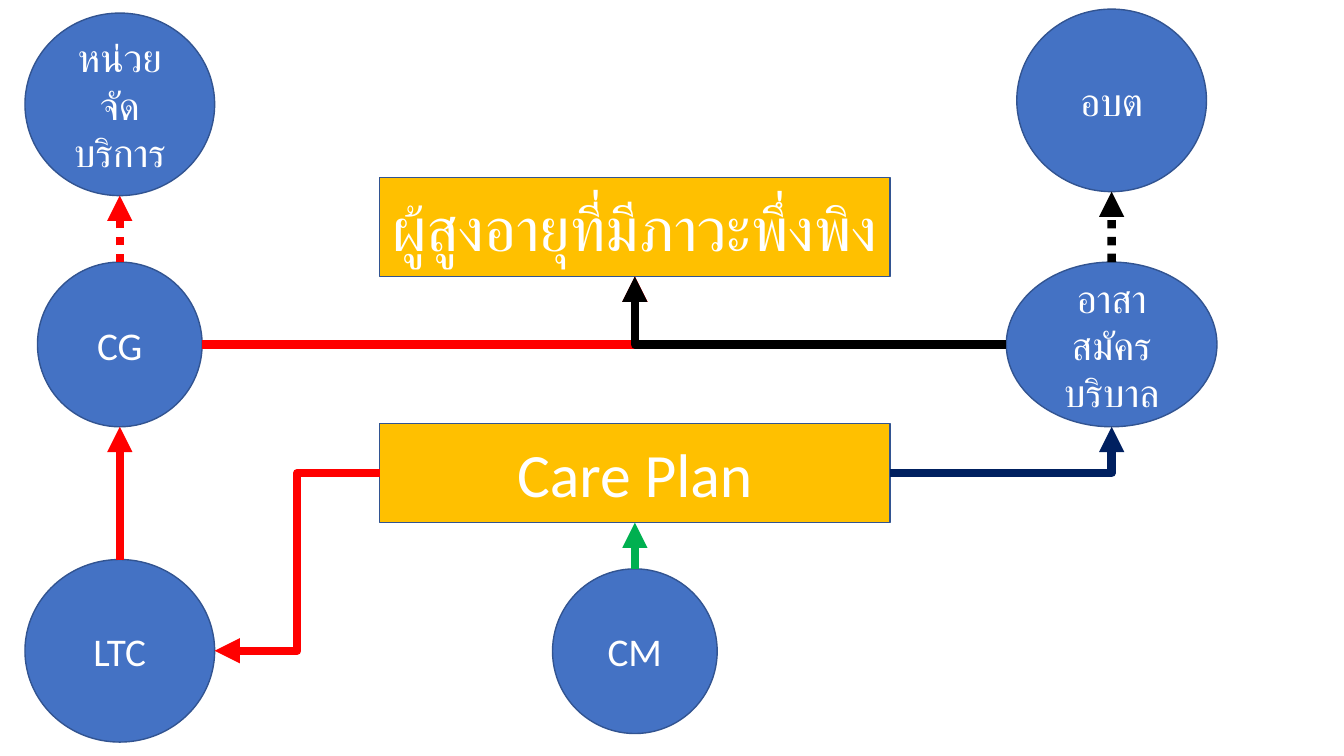
from dataclasses import dataclass
from lxml import etree
from pptx import Presentation
from pptx.dml.color import RGBColor
from pptx.enum.dml import MSO_LINE
from pptx.enum.shapes import MSO_CONNECTOR, MSO_SHAPE
from pptx.enum.text import MSO_ANCHOR, PP_ALIGN
from pptx.oxml.ns import qn
from pptx.util import Cm, Pt

OVAL, RECT = MSO_SHAPE.OVAL, MSO_SHAPE.RECTANGLE
LINE, BENT = MSO_CONNECTOR.STRAIGHT, MSO_CONNECTOR.ELBOW
DOTS = MSO_LINE.ROUND_DOT
MID, CENTER = MSO_ANCHOR.MIDDLE, PP_ALIGN.CENTER


@dataclass(frozen=True)
class Theme:
    font: str = "Calibri"
    small: int = 28
    large: int = 44
    edge: float = 1
    link: float = 6
    white: str = "FFFFFF"
    blue: str = "4472C4"
    rim: str = "325491"
    gold: str = "FFC000"
    red: str = "FF0000"
    green: str = "00B050"
    navy: str = "002060"
    black: str = "000000"


THEME = Theme()
BIG, ROUND, WIDE, BAR = (4.78, 4.6), (4.15, 4.15), (5.31, 4.15), (12.86, 2.5)
SIDES = {"top": (0.5, 0), "left": (0, 0.5), "low": (0.5, 1), "right": (1, 0.5)}


def tint(text):
    return RGBColor.from_string(text)


def node(slide, kind, mid, size, text, fill, points):
    wide, high = size
    shape = slide.shapes.add_shape(
        kind, Cm(mid[0] - wide / 2), Cm(mid[1] - high / 2), Cm(wide), Cm(high))
    shape.shadow.inherit = False
    shape.fill.solid()
    shape.fill.fore_color.rgb = tint(fill)
    shape.line.color.rgb = tint(THEME.rim)
    shape.line.width = Pt(THEME.edge)
    frame = shape.text_frame
    frame.word_wrap = True
    frame.vertical_anchor = MID
    para = frame.paragraphs[0]
    para.alignment = CENTER
    run = para.add_run()
    run.text = text
    run.font.name = THEME.font
    run.font.size = Pt(points)
    run.font.color.rgb = tint(THEME.white)
    return shape


def column(slide, box, parts):
    left, top, width = box
    return [
        node(slide, OVAL, (left + width / 2, top + drop), size, text,
             THEME.blue, THEME.small)
        for text, drop, size in parts]


def center(slide, box):
    left, top, width = box
    axis = left + width / 2
    bars = [
        node(slide, RECT, (axis, top + drop), BAR, text, THEME.gold, THEME.large)
        for text, drop in (("ผู้สูงอายุที่มีภาวะพึ่งพิง", 1.25), ("Care Plan", 7.45))]
    return bars + column(slide, (left, top, width), [("CM", 11.94, ROUND)])


def port(shape, side):
    across, down = SIDES[side]
    return (int(shape.left + across * shape.width),
            int(shape.top + down * shape.height))


def link(slide, start, end, color, kind=LINE, dash=None, corner=False):
    wire = slide.shapes.add_connector(kind, *port(*start), *port(*end))
    wire.line.color.rgb = tint(color)
    wire.line.width = Pt(THEME.link)
    if dash:
        wire.line.dash_style = dash
    props = wire._element.spPr
    if corner:
        props.find(qn("a:prstGeom")).set("prst", "bentConnector2")
    etree.SubElement(props.find(qn("a:ln")), qn("a:tailEnd"), type="triangle")
    etree.SubElement(props, qn("a:effectLst"))


def chart(slide, box):
    left, top = box
    unit, giver, team = column(slide, (left + 0.63, top, 4.78), [
        ("หน่วยจัดบริการ", 2.63, BIG), ("CG", 8.68, ROUND), ("LTC", 16.4, BIG)])
    elder, plan, lead = center(slide, (left + 9.57, top + 4.47, 12.86))
    local, aide = column(slide, (left + 25.36, top, 5.31), [
        ("อบต", 2.53, BIG), ("อาสาสมัครบริบาล", 8.68, WIDE)])

    link(slide, (lead, "top"), (plan, "low"), THEME.green)
    link(slide, (plan, "left"), (team, "right"), THEME.red, BENT)
    link(slide, (team, "top"), (giver, "low"), THEME.red)
    link(slide, (plan, "right"), (aide, "low"), THEME.navy, BENT, corner=True)
    link(slide, (giver, "right"), (elder, "low"), THEME.red, BENT, corner=True)
    link(slide, (giver, "top"), (unit, "low"), THEME.red, dash=DOTS)
    link(slide, (aide, "left"), (elder, "low"), THEME.black, BENT, corner=True)
    link(slide, (aide, "top"), (local, "low"), THEME.black, dash=DOTS)


def main():
    deck = Presentation()
    deck.slide_width, deck.slide_height = Cm(33.87), Cm(19.05)
    slide = deck.slides.add_slide(deck.slide_layouts[6])
    slide.background.fill.solid()
    slide.background.fill.fore_color.rgb = tint(THEME.white)
    chart(slide, (0, 0))
    deck.save("out.pptx")


if __name__ == "__main__":
    main()
